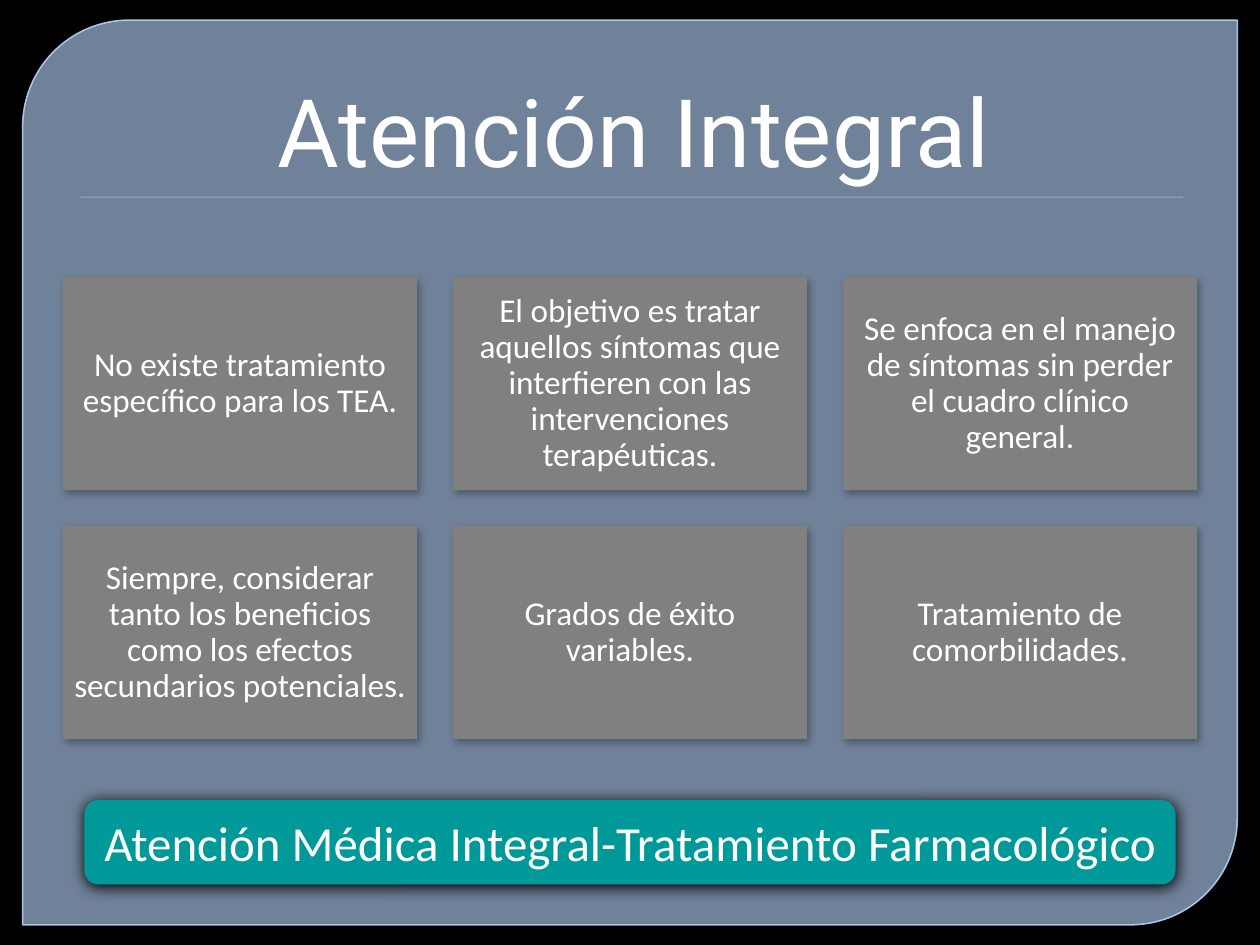
from lxml.etree import SubElement
from pptx import Presentation
from pptx.dml.color import RGBColor
from pptx.enum.shapes import MSO_SHAPE as Shape
from pptx.enum.text import MSO_ANCHOR as Anchor, PP_ALIGN as Align
from pptx.oxml.ns import qn
from pptx.util import Inches, Pt

BLACK = RGBColor(0x00, 0x00, 0x00)
WHITE = RGBColor(0xFF, 0xFF, 0xFF)
FRAME_FILL = RGBColor(0xAD, 0xC9, 0xEE)
FRAME_LINE = RGBColor(0xB7, 0xD6, 0xFF)
RULE_BLUE = RGBColor(0x80, 0xAA, 0xDF)
TEAL = RGBColor(0x00, 0x99, 0x99)
GRAY = RGBColor(0x80, 0x80, 0x80)

TREATMENT_POINTS = [
    "No existe tratamiento específico para los TEA.",
    "El objetivo es tratar aquellos síntomas que interfieren con las intervenciones terapéuticas.",
    "Se enfoca en el manejo de síntomas sin perder el cuadro clínico general.",
    "Siempre, considerar tanto los beneficios como los efectos secundarios potenciales.",
    "Grados de éxito variables.",
    "Tratamiento de comorbilidades.",
]


def add_panel(kind, left, top, width, height, color, shadow=None):
    """Add a borderless shape; shadow is (opacity %, blur pt, distance pt, angle)."""
    panel = slide.shapes.add_shape(kind, Inches(left), Inches(top), Inches(width), Inches(height))
    panel.fill.solid()
    panel.fill.fore_color.rgb = color
    panel.line.fill.background()
    panel.shadow.inherit = False
    if shadow:
        opacity, blur, distance, angle = shadow
        effects = panel.element.spPr.find(qn("a:effectLst"))
        outer = SubElement(effects, qn("a:outerShdw"), blurRad=str(Pt(blur)), dist=str(Pt(distance)),
                           dir=str(angle * 60000), algn="ctr", rotWithShape="0")
        shade = SubElement(outer, qn("a:srgbClr"), val=str(BLACK))
        SubElement(shade, qn("a:alpha"), val=str(opacity * 1000))
    return panel


def set_text(shape, text, size, font="Calibri", anchor=Anchor.MIDDLE, inset=None, spacing=None):
    frame = shape.text_frame
    frame.text = text
    frame.word_wrap = True
    frame.vertical_anchor = anchor
    if inset is not None:
        frame.margin_left = frame.margin_right = Inches(inset)
        frame.margin_top = frame.margin_bottom = Inches(inset)
    paragraph = frame.paragraphs[0]
    paragraph.alignment = Align.CENTER
    if spacing:
        paragraph.line_spacing = spacing
    paragraph.font.size = Pt(size)
    paragraph.font.name = font
    paragraph.font.color.rgb = WHITE


prs = Presentation()
prs.slide_width, prs.slide_height = Inches(10), Inches(7.5)
slide = prs.slides.add_slide(prs.slide_layouts[5])
slide.background.fill.solid()
slide.background.fill.fore_color.rgb = BLACK

# Backdrop frame and the rule under the title
frame = add_panel(Shape.ROUND_2_DIAG_RECTANGLE, 0.18, 0.16, 9.64, 7.18, FRAME_FILL)
frame.adjustments[0] = 0.118
frame.line.color.rgb = FRAME_LINE
frame.line.width = Pt(0.87)
for fill, opacity in ((frame.element.spPr.find(qn("a:solidFill")), 65),
                      (frame.line._ln.find(qn("a:solidFill")), 88)):
    SubElement(fill[0], qn("a:alpha"), val=str(opacity * 1000))
add_panel(Shape.RECTANGLE, 0.64, 1.56, 8.75, 0.01, RULE_BLUE, shadow=(75, 1, 1, 90))

# Title, in front of the frame
title = slide.shapes.title
title.left, title.top, title.width, title.height = Inches(0.5), Inches(0.28), Inches(9), Inches(1.25)
set_text(title, "Atención Integral", 54, font="Roboto", anchor=Anchor.BOTTOM)
title.text_frame.paragraphs[0]._p.get_or_add_pPr().set("marL", str(Inches(0.06)))
title.element.addprevious(frame.element)

# Closing banner
banner = add_panel(Shape.ROUNDED_RECTANGLE, 0.67, 6.35, 8.66, 0.67, TEAL, shadow=(100, 8.5, 1, 90))
set_text(banner, "Atención Médica Integral-Tratamiento Farmacológico", 28)

# Cards in a grid three across
COLUMNS = 3
CARD_WIDTH, CARD_HEIGHT = 2.81, 1.69
GRID_LEFT, GRID_TOP, GRID_WIDTH = 0.5, 2.2, 9
gap = (GRID_WIDTH - COLUMNS * CARD_WIDTH) / (COLUMNS - 1)
for index, point in enumerate(TREATMENT_POINTS):
    row, column = divmod(index, COLUMNS)
    card = add_panel(Shape.RECTANGLE, GRID_LEFT + column * (CARD_WIDTH + gap),
                     GRID_TOP + row * (CARD_HEIGHT + gap), CARD_WIDTH, CARD_HEIGHT,
                     GRAY, shadow=(30, 4.5, 2.6, 53))
    set_text(card, point, 19, inset=0.08, spacing=0.9)

prs.save("out.pptx")
